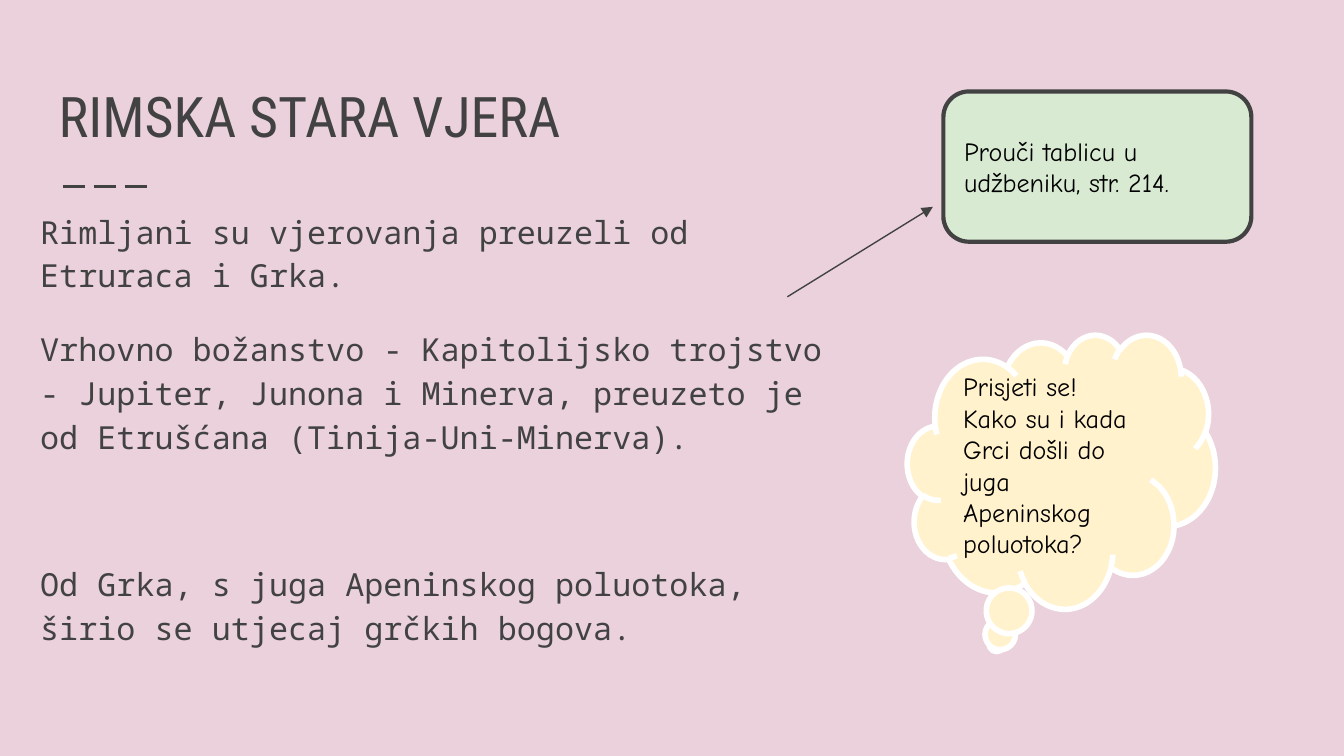
from lxml import etree
from pptx import Presentation
from pptx.dml.color import RGBColor
from pptx.enum.dml import MSO_LINE
from pptx.enum.shapes import MSO_CONNECTOR, MSO_SHAPE
from pptx.enum.text import MSO_ANCHOR as ANCHOR, PP_ALIGN
from pptx.oxml.ns import qn
from pptx.util import Cm, Pt

COLORS = {
    "background": "EAD1DC",
    "ink": "424242",
    "black": "000000",
    "white": "FFFFFF",
    "cream": "FFF2CC",
    "mint": "D9EAD3",
}


def rgb(name):
    return RGBColor.from_string(COLORS[name])


class SlideBuilder:
    """Holds the style and the slide being built; lengths are in cm."""

    title_font = "Roboto Condensed"
    body_font = "Noto Sans Mono"
    note_font = "Comic Neue"
    inset = 0.25

    def __init__(self, prs):
        self.s = prs.slides.add_slide(prs.slide_layouts[6])
        fill = self.s.background.fill
        fill.solid()
        fill.fore_color.rgb = rgb("background")

    def add_text(self, sp, texts, font, size, color, anchor, spacing=None, before=()):
        """Fill sp with one paragraph per text; before lists the points above each."""
        tf = sp.text_frame
        tf.word_wrap = True
        tf.vertical_anchor = anchor
        tf.margin_left = tf.margin_right = Cm(self.inset)
        tf.margin_top = tf.margin_bottom = Cm(self.inset)
        for i, text in enumerate(texts):
            p = tf.paragraphs[0] if i == 0 else tf.add_paragraph()
            p.alignment = PP_ALIGN.LEFT
            if spacing:
                p.line_spacing = spacing
            if before:
                p.space_before = Pt(before[i])
            r = p.add_run()
            r.text = text
            r.font.name = font
            r.font.size = Pt(size)
            r.font.color.rgb = rgb(color)

    def title(self, box, text):
        sp = self.s.shapes.add_textbox(*map(Cm, box))
        self.add_text(sp, [text], self.title_font, 30, "ink", ANCHOR.BOTTOM)

    def body(self, box, texts, before):
        sp = self.s.shapes.add_textbox(*map(Cm, box))
        self.add_text(sp, texts, self.body_font, 17, "ink", ANCHOR.TOP, 1.15, before)

    def note(self, kind, box, adjustments, fill, line, width, texts):
        sp = self.s.shapes.add_shape(kind, *map(Cm, box))
        for i, value in enumerate(adjustments):
            sp.adjustments[i] = value
        sp.shadow.inherit = False
        sp.fill.solid()
        sp.fill.fore_color.rgb = rgb(fill)
        sp.line.color.rgb = rgb(line)
        sp.line.width = Pt(width)
        self.add_text(sp, texts, self.note_font, 14, "black", ANCHOR.MIDDLE)

    def line(self, start, end, width, dash=None, arrow=False):
        points = map(Cm, (*start, *end))
        cx = self.s.shapes.add_connector(MSO_CONNECTOR.STRAIGHT, *points)
        cx.line.color.rgb = rgb("ink")
        cx.line.width = Pt(width)
        if dash:
            cx.line.dash_style = dash
        sp_pr = cx.element.spPr
        if arrow:
            etree.SubElement(sp_pr.find(qn("a:ln")), qn("a:tailEnd"), type="triangle")
        etree.SubElement(sp_pr, qn("a:effectLst"))


def main():
    prs = Presentation()
    prs.slide_width, prs.slide_height = Cm(25.4), Cm(14.29)

    b = SlideBuilder(prs)
    b.line((1.19, 3.53), (2.9, 3.53), 1.5, dash=MSO_LINE.LONG_DASH)
    b.title((0.86, 1.04, 23.67, 2.03), "RIMSKA STARA VJERA")
    b.body(
        (0.51, 3.66, 15.34, 9.75),
        [
            "Rimljani su vjerovanja preuzeli od Etruraca i Grka.",
            "Vrhovno božanstvo - Kapitolijsko trojstvo - Jupiter, Junona i Minerva, "
            "preuzeto je od Etrušćana (Tinija-Uni-Minerva).",
            "Od Grka, s juga Apeninskog poluotoka, širio se utjecaj grčkih bogova.",
        ],
        before=(0, 16, 55.5),
    )
    b.note(
        MSO_SHAPE.CLOUD_CALLOUT, (17.15, 6.32, 5.82, 5.18), (-0.21, 0.63),
        "cream", "white", 3,
        ["Prisjeti se!", "Kako su i kada Grci došli do juga Apeninskog poluotoka?"],
    )
    b.note(
        MSO_SHAPE.ROUNDED_RECTANGLE, (17.83, 1.73, 5.82, 2.84), (0.17,),
        "mint", "ink", 2.25,
        ["Prouči tablicu u udžbeniku, str. 214."],
    )
    b.line((14.88, 5.61), (17.63, 3.91), 0.75, arrow=True)

    prs.save("out.pptx")


if __name__ == "__main__":
    main()
